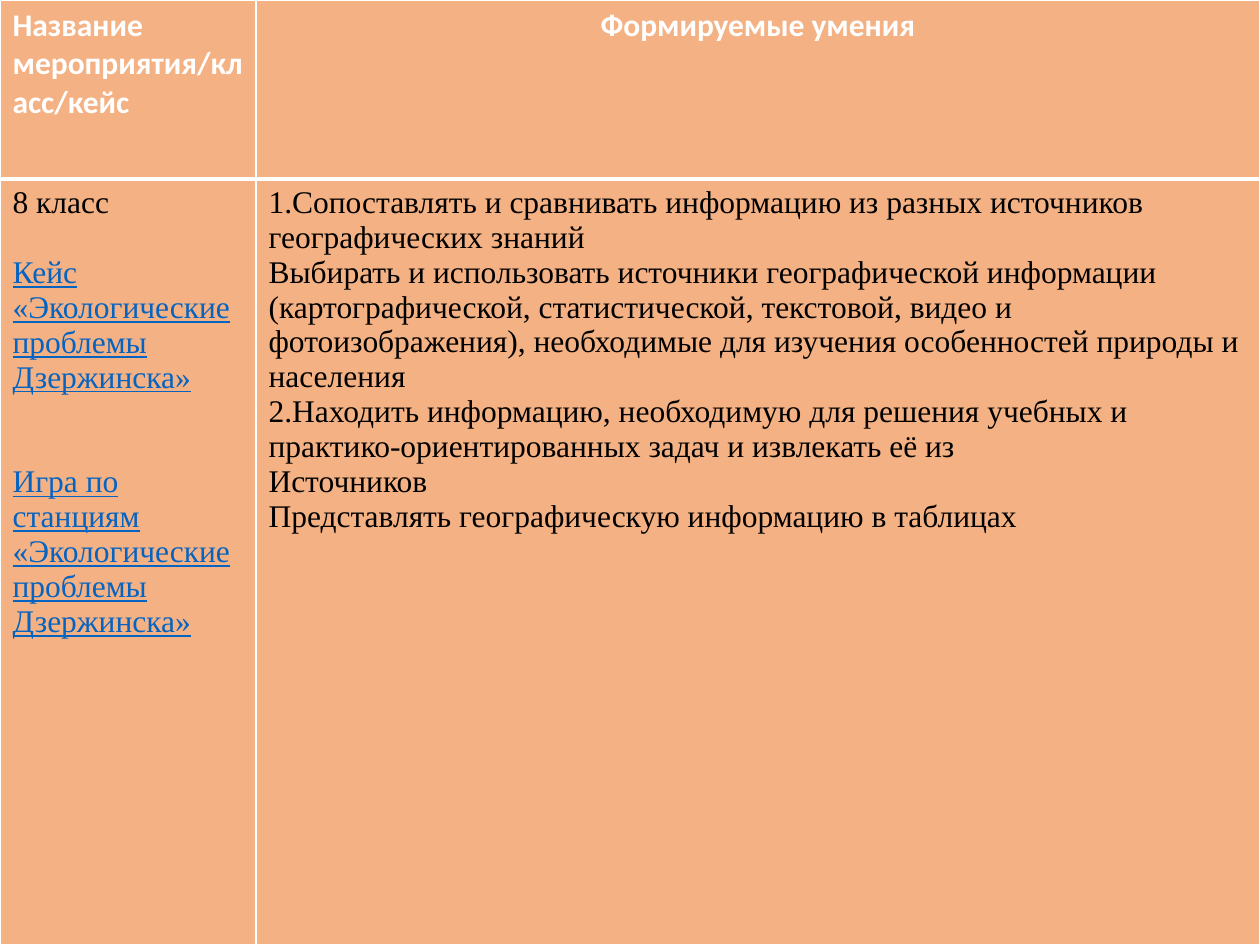
from dataclasses import dataclass

import pptx
import pptx.dml.color
import pptx.enum.text
import pptx.oxml
import pptx.oxml.ns
import pptx.table
import pptx.util

Cm = pptx.util.Cm
Pt = pptx.util.Pt
PP_ALIGN = pptx.enum.text.PP_ALIGN


@dataclass(frozen=True)
class Theme:
    fill: str = "F4B183"
    border: str = "FFFFFF"
    header_text: str = "FFFFFF"
    body_text: str = "000000"
    link: str = "0563C1"
    header_font: str = "Calibri"
    body_font: str = "Times New Roman"
    size: float = 18
    line: float = 20
    thin: float = 1
    thick: float = 3


THEME = Theme()


@dataclass(frozen=True)
class Para:
    text: str
    header: bool = False
    link: bool = False
    centered: bool = False
    lines_before: int = 0


COLUMN_WIDTHS = (5.16, 20.24)
ROW_HEIGHTS = (3.61, 15.44)

ROWS: list[list[list[Para]]] = [
    [
        [Para("Название мероприятия/класс/кейс", header=True)],
        [Para("Формируемые умения", header=True, centered=True)],
    ],
    [
        [
            Para("8 класс"),
            Para("Кейс «Экологические проблемы Дзержинска»",
                 link=True, lines_before=1),
            Para("Игра по станциям «Экологические проблемы Дзержинска»",
                 link=True, lines_before=2),
        ],
        [
            Para("1.Сопоставлять и сравнивать информацию из разных источников "
                 "географических знаний"),
            Para("Выбирать и использовать источники географической информации "
                 "(картографической, статистической, текстовой, видео и "
                 "фотоизображения), необходимые для изучения особенностей "
                 "природы и населения"),
            Para("2.Находить информацию, необходимую для решения учебных и "
                 "практико-ориентированных задач и извлекать её из"),
            Para("Источников"),
            Para("Представлять географическую информацию в таблицах"),
        ],
    ],
]


def rgb(value: str) -> pptx.dml.color.RGBColor:
    return pptx.dml.color.RGBColor.from_string(value)


def set_borders(cell: pptx.table._Cell, top: float, bottom: float) -> None:
    """Draw all four cell edges; the side edges are always thin."""
    tc_pr = cell._tc.get_or_add_tcPr()
    widths = {"lnL": THEME.thin, "lnR": THEME.thin, "lnT": top, "lnB": bottom}
    for i, (tag, width) in enumerate(widths.items()):
        tc_pr.insert(i, pptx.oxml.parse_xml(
            f'<a:{tag} {pptx.oxml.ns.nsdecls("a")} w="{Pt(width)}">'
            f'<a:solidFill><a:srgbClr val="{THEME.border}"/></a:solidFill>'
            f'</a:{tag}>'))


def write_cell(cell: pptx.table._Cell, paras: list[Para]) -> None:
    cell.fill.solid()
    cell.fill.fore_color.rgb = rgb(THEME.fill)
    tf = cell.text_frame
    for i, para in enumerate(paras):
        p = tf.add_paragraph() if i else tf.paragraphs[0]
        r = p.add_run()
        r.text = para.text
        p.alignment = PP_ALIGN.CENTER if para.centered else PP_ALIGN.LEFT
        p.space_before = Pt(para.lines_before * THEME.line)
        font = r.font
        font.name = THEME.header_font if para.header else THEME.body_font
        font.size = Pt(THEME.size)
        font.bold = para.header
        font.underline = para.link
        color = THEME.header_text if para.header else THEME.body_text
        font.color.rgb = rgb(THEME.link if para.link else color)


def main() -> None:
    prs = pptx.Presentation()
    prs.slide_width, prs.slide_height = Cm(25.4), Cm(19.05)
    s = prs.slides.add_slide(prs.slide_layouts[6])

    table = s.shapes.add_table(len(ROWS), len(COLUMN_WIDTHS), Cm(0), Cm(0),
                               prs.slide_width, prs.slide_height).table
    table.horz_banding = False
    for column, width in zip(table.columns, COLUMN_WIDTHS):
        column.width = Cm(width)
    for row, height, contents in zip(table.rows, ROW_HEIGHTS, ROWS):
        row.height = Cm(height)
        for cell, paras in zip(row.cells, contents):
            write_cell(cell, paras)
            if paras[0].header:
                set_borders(cell, top=THEME.thin, bottom=THEME.thick)
            else:
                set_borders(cell, top=THEME.thick, bottom=THEME.thin)

    prs.save("out.pptx")


if __name__ == "__main__":
    main()
